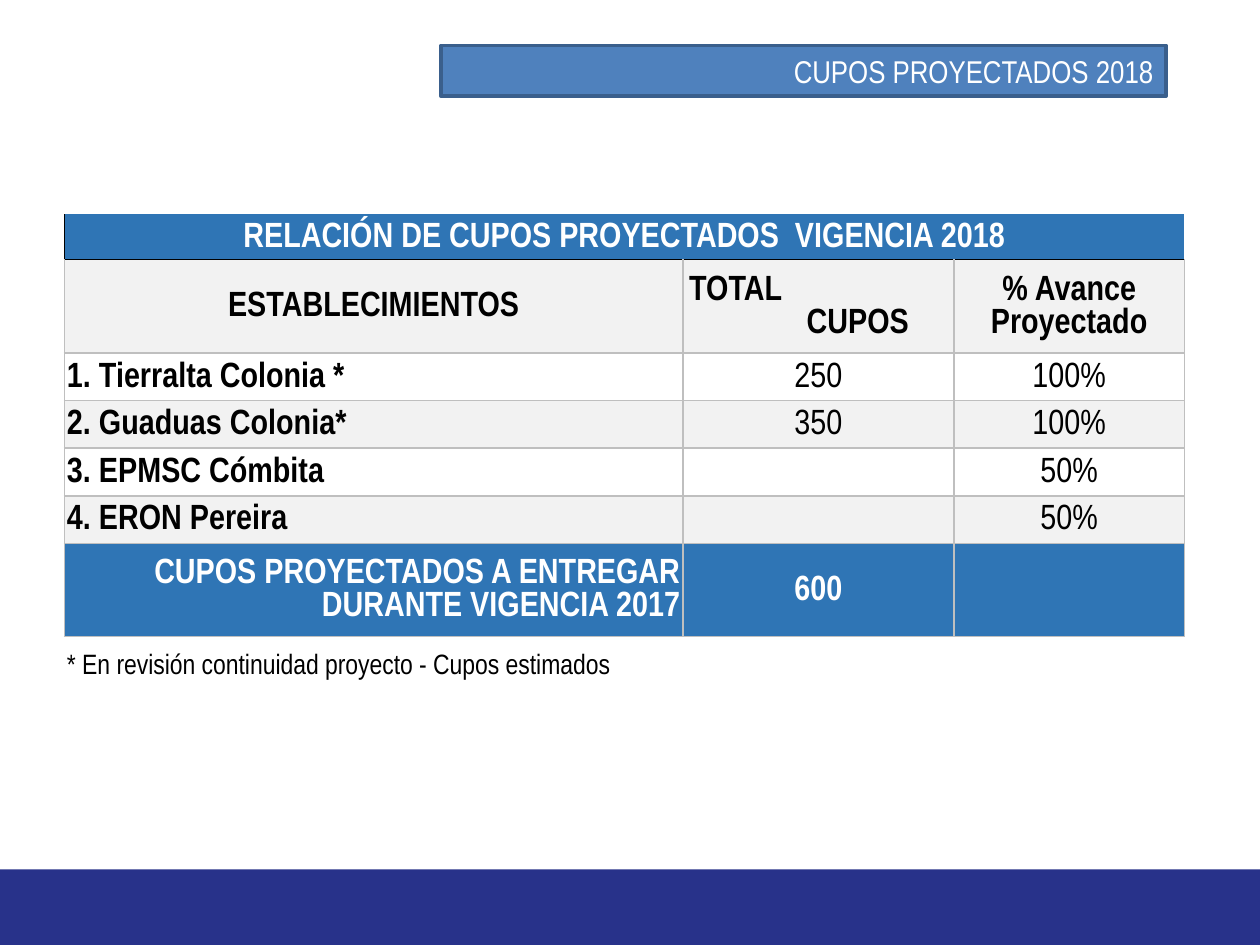
from pptx import Presentation
from pptx.dml.color import RGBColor
from pptx.enum.shapes import MSO_SHAPE as Shape
from pptx.enum.text import MSO_ANCHOR as Anchor, PP_ALIGN as Align
from pptx.oxml.ns import qn
from pptx.util import Pt
from lxml.etree import SubElement

WHITE = RGBColor(0xFF, 0xFF, 0xFF)
BLACK = RGBColor(0x00, 0x00, 0x00)
NAVY = RGBColor(0x28, 0x32, 0x8A)
BANNER_BLUE = RGBColor(0x4F, 0x81, 0xBD)
BANNER_EDGE = RGBColor(0x3A, 0x5F, 0x8C)
TABLE_BLUE = RGBColor(0x2F, 0x75, 0xB5)
LIGHT_GREY = RGBColor(0xF2, 0xF2, 0xF2)
BORDER_GREY = RGBColor(0xBF, 0xBF, 0xBF)

NO_TABLE_STYLE = "{2D5ABB26-0587-4C30-8999-92F81FD0307C}"
GREY_LINE, BLACK_LINE = (BORDER_GREY, 1), (BLACK, 0.5)
BOX = dict.fromkeys("LRTB", GREY_LINE)

COLUMN_WIDTHS = [353.5, 154.8, 131.8]
ROW_HEIGHTS = [26.2, 53.3, 27.2, 27.2, 27.2, 27.2, 53.3, 25.2]
ESTABLISHMENTS = [
    ("1. Tierralta Colonia *", "250", "100%"),
    ("2. Guaduas Colonia*", "350", "100%"),
    ("3. EPMSC Cómbita", "", "50%"),
    ("4. ERON Pereira", "", "50%"),
]


class SlideBuilder:
    font_name = "Arial Narrow"

    def __init__(self, slide):
        self.slide = slide

    def add_text(self, paragraph, text, align, **font_format):
        paragraph.alignment = align
        run = paragraph.add_run()
        run.text = text
        color = font_format.pop("color", BLACK)
        for name, value in {"name": self.font_name, **font_format}.items():
            setattr(run.font, name, value)
        run.font.color.rgb = color

    def rectangle(self, left, top, width, height, fill, edge=None):
        shape = self.slide.shapes.add_shape(
            Shape.RECTANGLE, Pt(left), Pt(top), Pt(width), Pt(height))
        shape.shadow.inherit = False
        shape.fill.solid()
        shape.fill.fore_color.rgb = fill
        if edge:
            shape.line.color.rgb = edge
            shape.line.width = Pt(2)
        else:
            shape.line.fill.background()
        return shape

    def table(self, left, top, widths, heights):
        frame = self.slide.shapes.add_table(
            len(heights), len(widths), Pt(left), Pt(top), Pt(sum(widths)), Pt(sum(heights)))
        table = frame.table
        table.first_row = table.horz_banding = False
        table._tbl.tblPr.find(qn("a:tableStyleId")).text = NO_TABLE_STYLE
        for column, width in zip(table.columns, widths):
            column.width = Pt(width)
        for row, height in zip(table.rows, heights):
            row.height = Pt(height)
        return table

    def cell(self, cell, lines, align=Align.CENTER, fill=None, borders=BOX,
             anchor=Anchor.MIDDLE, size=20, **font_format):
        """Fill a cell; lines holds (text, alignment, indent) or is a plain string."""
        layout = {"margin_left": Pt(1.5), "margin_right": Pt(1.5), "margin_top": Pt(1.5),
                  "margin_bottom": 0, "vertical_anchor": anchor}
        for name, value in layout.items():
            setattr(cell, name, value)
        self.borders(cell, borders)
        if fill:
            cell.fill.solid()
            cell.fill.fore_color.rgb = fill
        else:
            cell.fill.background()
        if isinstance(lines, str):
            lines = [(lines, align, 0)] if lines else []
        frame = cell.text_frame
        for index, (text, line_align, indent) in enumerate(lines):
            paragraph = frame.add_paragraph() if index else frame.paragraphs[0]
            self.add_text(paragraph, text, line_align, size=Pt(size), **font_format)
            if indent:
                paragraph._p.get_or_add_pPr().set("marL", str(Pt(indent)))

    def borders(self, cell, borders):
        properties = cell._tc.get_or_add_tcPr()
        for side in "LRTB":
            if side in borders:
                color, width = borders[side]
                line = SubElement(properties, qn(f"a:ln{side}"), w=str(Pt(width)))
                fill = SubElement(line, qn("a:solidFill"))
                SubElement(fill, qn("a:srgbClr"), val=str(color))


def add_quota_table(builder):
    table = builder.table(36.8, 122.3, COLUMN_WIDTHS, ROW_HEIGHTS)
    last = len(ROW_HEIGHTS) - 1

    table.cell(0, 0).merge(table.cell(0, 2))
    builder.cell(table.cell(0, 0), "RELACIÓN DE CUPOS PROYECTADOS  VIGENCIA 2018",
                 fill=TABLE_BLUE, borders={"L": BLACK_LINE, "B": BLACK_LINE},
                 bold=True, color=WHITE)

    open_top = {side: GREY_LINE for side in "LRB"}
    headers = [
        ("ESTABLECIMIENTOS", {**BOX, "T": BLACK_LINE}),
        ([("TOTAL", Align.LEFT, 2), ("CUPOS", Align.CENTER, 45)], open_top),
        ("% Avance Proyectado", open_top),
    ]
    for column, (lines, borders) in enumerate(headers):
        builder.cell(table.cell(1, column), lines, fill=LIGHT_GREY, borders=borders, bold=True)

    for row, values in enumerate(ESTABLISHMENTS, start=2):
        for column, value in enumerate(values):
            builder.cell(table.cell(row, column), value,
                         align=Align.CENTER if column else Align.LEFT,
                         fill=LIGHT_GREY if row % 2 else None, bold=column == 0)

    totals = ["CUPOS PROYECTADOS A ENTREGAR DURANTE VIGENCIA 2017", "600", ""]
    for column, value in enumerate(totals):
        builder.cell(table.cell(last - 1, column), value,
                     align=Align.CENTER if column else Align.RIGHT,
                     fill=TABLE_BLUE, bold=True, color=WHITE)

    table.cell(last, 0).merge(table.cell(last, 1))
    notes = ["* En revisión continuidad proyecto - Cupos estimados", "", ""]
    for column, note in enumerate(notes):
        builder.cell(table.cell(last, column), note, align=Align.LEFT,
                     borders={"T": GREY_LINE}, anchor=Anchor.BOTTOM, size=16, bold=False)


def main():
    presentation = Presentation()
    presentation.slide_width, presentation.slide_height = Pt(720), Pt(540)
    builder = SlideBuilder(presentation.slides.add_slide(presentation.slide_layouts[6]))

    builder.rectangle(0, 496.8, 720, 43.2, NAVY)
    banner = builder.rectangle(252, 25.9, 414.3, 29.1, BANNER_BLUE, BANNER_EDGE)
    banner.text_frame.word_wrap = True
    builder.add_text(banner.text_frame.paragraphs[0], "CUPOS PROYECTADOS 2018",
                     Align.RIGHT, size=Pt(18), color=WHITE)
    add_quota_table(builder)
    presentation.save("out.pptx")


if __name__ == "__main__":
    main()
